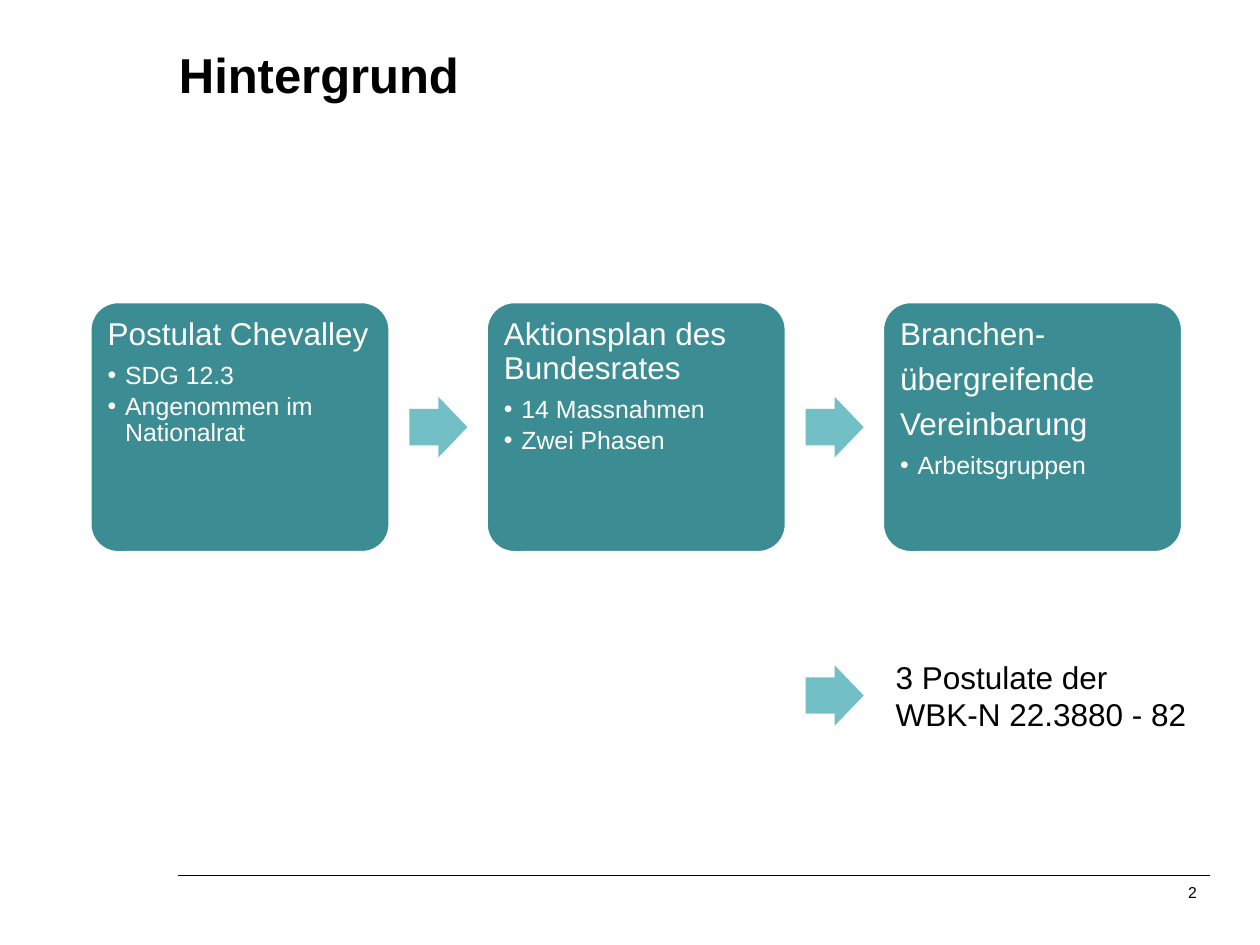
import pptx
import pptx.util
import pptx.dml.color
import pptx.enum.shapes
import pptx.enum.text
import pptx.oxml.ns
import lxml.etree

Inches = pptx.util.Inches
Pt = pptx.util.Pt
MSO_SHAPE = pptx.enum.shapes.MSO_SHAPE
ALIGN = pptx.enum.text.PP_ALIGN
ANCHOR = pptx.enum.text.MSO_ANCHOR
qn = pptx.oxml.ns.qn

COLORS = {"step": "3C8C93", "arrow": "72BFC5", "light": "FFFFFF", "text": "000000"}
TITLE = "Hintergrund"
STEPS = [
    (["Postulat Chevalley"], ["SDG 12.3", "Angenommen im Nationalrat"]),
    (["Aktionsplan des Bundesrates"], ["14 Massnahmen", "Zwei Phasen"]),
    (["Branchen-", "übergreifende", "Vereinbarung"], ["Arbeitsgruppen"]),
]
FOLLOW_UP = "3 Postulate der WBK-N 22.3880 - 82"
PAGE_NUMBER = "2"

STEP_LEFT, STEP_TOP, STEP_WIDTH, STEP_HEIGHT = 0.72, 2.4, 2.37, 1.98
STEP_PITCH = 3.145
ARROW_GAP, ARROW_WIDTH, ARROW_HEIGHT = 0.16, 0.46, 0.48
FOLLOW_UP_ARROW_TOP = 5.28


def rgb(name):
    return pptx.dml.color.RGBColor.from_string(COLORS[name])


def setup_frame(frame, insets, anchor=ANCHOR.TOP):
    frame.word_wrap = True
    frame.auto_size = pptx.enum.text.MSO_AUTO_SIZE.NONE
    frame.vertical_anchor = anchor
    frame.margin_left, frame.margin_top, frame.margin_right, frame.margin_bottom = map(Inches, insets)


def write(frame, text, size=18, color="text", bold=False, align=ALIGN.LEFT,
          spacing=1.0, after=0, bullet=False, first=True):
    paragraph = frame.paragraphs[0] if first else frame.add_paragraph()
    paragraph.alignment = align
    paragraph.line_spacing = spacing
    paragraph.space_before = Pt(0)
    paragraph.space_after = Pt(after)
    if bullet:
        properties = paragraph._p.get_or_add_pPr()
        properties.set("marL", str(Inches(0.14)))
        properties.set("indent", str(Inches(-0.14)))
        lxml.etree.SubElement(properties, qn("a:buFont")).set("typeface", "Arial")
        lxml.etree.SubElement(properties, qn("a:buChar")).set("char", "•")
    run = paragraph.add_run()
    run.text = text
    run.font.name = "Arial"
    run.font.size = Pt(size)
    run.font.bold = bold
    run.font.color.rgb = rgb(color)


def add_filled(slide, kind, left, top, width, height, color, adjustments):
    shape = slide.shapes.add_shape(kind, Inches(left), Inches(top), Inches(width), Inches(height))
    shape.shadow.inherit = False
    shape.fill.solid()
    shape.fill.fore_color.rgb = rgb(color)
    shape.line.fill.background()
    for index, value in enumerate(adjustments):
        shape.adjustments[index] = value
    return shape


def add_step(slide, left, headings, points):
    step = add_filled(slide, MSO_SHAPE.ROUNDED_RECTANGLE, left, STEP_TOP,
                      STEP_WIDTH, STEP_HEIGHT, "step", [0.11])
    step.line.color.rgb = rgb("light")
    step.line.width = Pt(1)
    setup_frame(step.text_frame, (0.07, 0.06, 0.06, 0.06))
    for index, heading in enumerate(headings):
        write(step.text_frame, heading, color="light", spacing=0.9, after=6.3, first=index == 0)
    for point in points:
        write(step.text_frame, point, size=14.2, color="light", spacing=0.9,
              after=2.1, bullet=True, first=False)


def add_arrow(slide, left, top):
    add_filled(slide, MSO_SHAPE.RIGHT_ARROW, left, top, ARROW_WIDTH, ARROW_HEIGHT,
               "arrow", [0.6, 0.5])


def add_text(slide, text, left, top, width, height, insets, **text_format):
    box = slide.shapes.add_textbox(Inches(left), Inches(top), Inches(width), Inches(height))
    setup_frame(box.text_frame, insets)
    write(box.text_frame, text, **text_format)


def main():
    presentation = pptx.Presentation()
    presentation.slide_width, presentation.slide_height = Inches(10), Inches(7.5)
    slide = presentation.slides.add_slide(presentation.slide_layouts[5])

    title = slide.shapes.title
    title.left, title.top, title.width, title.height = map(Inches, (1.42, 0.35, 8.16, 1.08))
    setup_frame(title.text_frame, (0, 0, 0, 0))
    write(title.text_frame, TITLE, size=28, bold=True)

    step_lefts = [STEP_LEFT + index * STEP_PITCH for index in range(len(STEPS))]
    arrow_lefts = [left + STEP_WIDTH + ARROW_GAP for left in step_lefts[:-1]]
    for left, (headings, points) in zip(step_lefts, STEPS):
        add_step(slide, left, headings, points)
    for left in arrow_lefts:
        add_arrow(slide, left, STEP_TOP + (STEP_HEIGHT - ARROW_HEIGHT) / 2)

    add_arrow(slide, arrow_lefts[-1], FOLLOW_UP_ARROW_TOP)
    add_text(slide, FOLLOW_UP, step_lefts[-1], 5.17, 2.55, 0.71, (0.1, 0.05, 0.1, 0.05))

    footer_rule = slide.shapes.add_connector(pptx.enum.shapes.MSO_CONNECTOR.STRAIGHT,
                                             Inches(9.6), Inches(6.95), Inches(1.41), Inches(6.95))
    footer_rule.line.color.rgb = rgb("text")
    footer_rule.line.width = Pt(0.75)
    lxml.etree.SubElement(footer_rule._element.spPr, qn("a:effectLst"))
    add_text(slide, PAGE_NUMBER, 7.05, 7, 2.48, 0.16, (0, 0, 0.03, 0),
             size=9, align=ALIGN.RIGHT, spacing=1.05)

    presentation.save("out.pptx")


if __name__ == "__main__":
    main()
